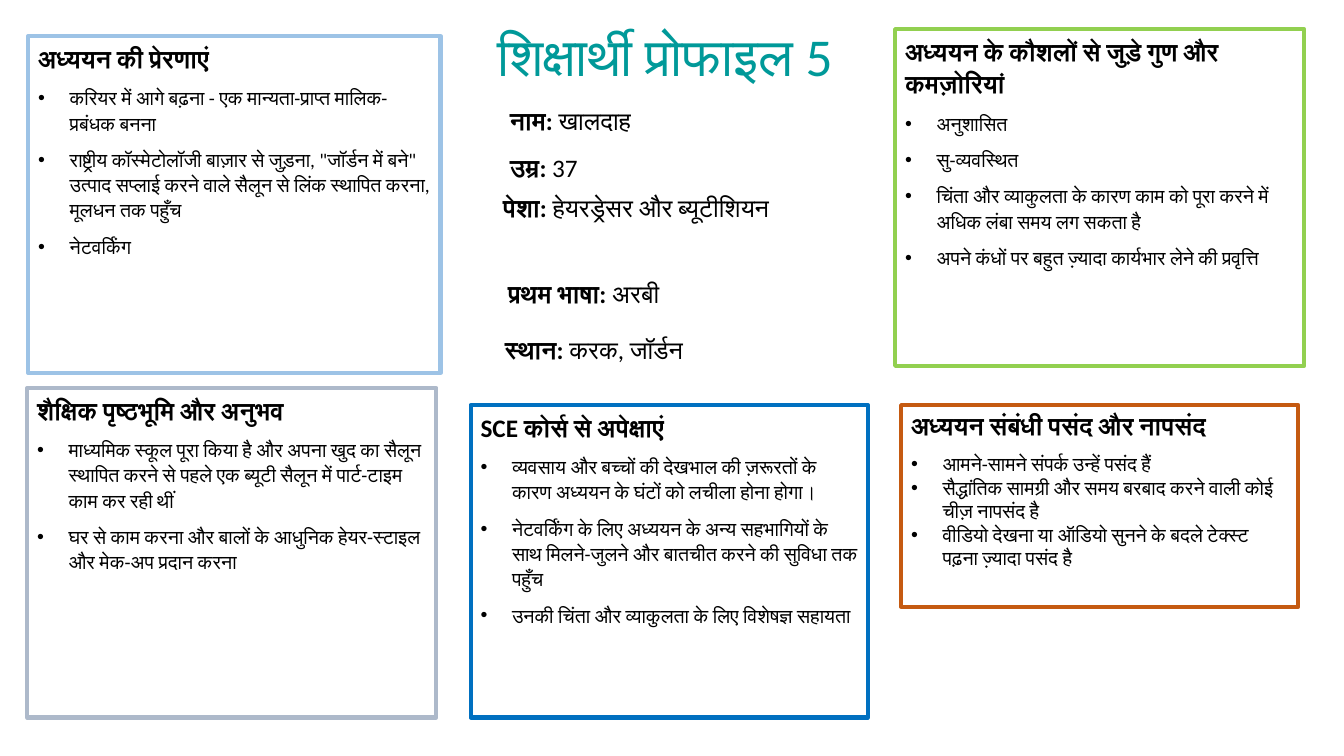
"""Builds a one-slide learner profile with outlined panels around a column of personal facts."""
from lxml.etree import SubElement
from pptx import Presentation
from pptx.dml.color import RGBColor
from pptx.enum.shapes import MSO_SHAPE as Preset
from pptx.enum.text import MSO_ANCHOR as Anchor, MSO_AUTO_SIZE as AutoSize, PP_ALIGN as Align
from pptx.oxml.ns import qn
from pptx.util import Pt

FONT = "Calibri"
INDENT = 22.5
SPACED = {"line": 1.07, "after": 8}
COMPACT = {"line": 1, "after": 0, "first_bullet_line": 1.5}

PANELS = [
    ((336.2, 289.4, 283.7, 223.2), "0070C0", SPACED, "SCE कोर्स से अपेक्षाएं", [
        "व्यवसाय और बच्चों की देखभाल की ज़रूरतों के कारण अध्ययन के घंटों को लचीला होना होगा।",
        "नेटवर्किंग के लिए अध्ययन के अन्य सहभागियों के साथ मिलने-जुलने और बातचीत करने की सुविधा तक पहुँच",
        "उनकी चिंता और व्याकुलता के लिए विशेषज्ञ सहायता"]),
    ((20.2, 25.9, 294.5, 240.5), "9DC3E6", SPACED, "अध्ययन की प्रेरणाएं", [
        "करियर में आगे बढ़ना - एक मान्यता-प्राप्त मालिक-प्रबंधक बनना",
        "राष्ट्रीय कॉस्मेटोलॉजी बाज़ार से जुड़ना, \"जॉर्डन में बने\" उत्पाद सप्लाई करने वाले सैलून से "
        "लिंक स्थापित करना, मूलधन तक पहुँच",
        "नेटवर्किंग"]),
    ((639.4, 20.9, 292.3, 240.5), "92D050", SPACED, "अध्ययन के कौशलों से जुड़े गुण और कमज़ोरियां", [
        "अनुशासित",
        "सु-व्यवस्थित",
        "चिंता और व्याकुलता के कारण काम को पूरा करने में अधिक लंबा समय लग सकता है",
        "अपने कंधों पर बहुत ज़्यादा कार्यभार लेने की प्रवृत्ति"]),
    ((19.4, 277.2, 292.3, 235.4), "ADB9CA", SPACED, "शैक्षिक पृष्ठभूमि और अनुभव", [
        "माध्यमिक स्कूल पूरा किया है और अपना खुद का सैलून स्थापित करने से पहले "
        "एक ब्यूटी सैलून में पार्ट-टाइम काम कर रही थीं",
        "घर से काम करना और बालों के आधुनिक हेयर-स्टाइल और मेक-अप प्रदान करना"]),
    ((643.7, 289.4, 283.7, 144), "C55A11", COMPACT, "अध्ययन संबंधी पसंद और नापसंद", [
        "आमने-सामने संपर्क उन्हें पसंद हैं",
        "सैद्धांतिक सामग्री और समय बरबाद करने वाली कोई चीज़ नापसंद है",
        "वीडियो देखना या ऑडियो सुनने के बदले टेक्स्ट पढ़ना ज़्यादा पसंद है"]),
]

FACTS = [
    ((357.1, 72, 270.7, 28.8), "नाम:", " खालदाह"),
    ((357.1, 105.1, 228.2, 28.8), "उम्र:", " 37"),
    ((352.1, 133.9, 248.4, 51.1), "पेशा:", " हेयरड्रेसर और ब्यूटीशियन"),
    ((355.7, 195.1, 248.4, 28.8), "प्रथम भाषा:", " अरबी"),
    ((353.5, 235.4, 248.4, 28.8), "स्थान:", " करक, जॉर्डन"),
]


def color(hex_code):
    """Turn a hex string into a colour."""
    return RGBColor.from_string(hex_code)


def in_points(box):
    """Convert left, top, width and height to lengths."""
    return [Pt(length) for length in box]


def style_run(run, size, bold=False, hex_code="000000"):
    """Format one run for Latin and Devanagari text."""
    run.font.name = FONT
    run.font.size = Pt(size)
    run.font.bold = bold
    run.font.color.rgb = color(hex_code)
    SubElement(run.font._element, qn("a:cs")).set("typeface", FONT)


def add_bullet(paragraph):
    """Give a paragraph a hanging round bullet."""
    properties = paragraph._p.get_or_add_pPr()
    properties.set("marL", str(Pt(INDENT)))
    properties.set("indent", str(Pt(-INDENT)))
    SubElement(properties, qn("a:buFont")).set("typeface", "Arial")
    SubElement(properties, qn("a:buChar")).set("char", "•")


def add_title(slide, box, wording):
    """Place the slide title in its placeholder."""
    title = slide.shapes.title
    title.left, title.top, title.width, title.height = in_points(box)
    frame = title.text_frame
    frame.text = wording
    frame.word_wrap = False
    frame.auto_size = AutoSize.SHAPE_TO_FIT_TEXT
    frame.vertical_anchor = Anchor.TOP
    heading = frame.paragraphs[0]
    heading.alignment = Align.LEFT
    heading.line_spacing = 0.9
    heading.space_before = Pt(10)
    style_run(heading.runs[0], 38, hex_code="009999")


def add_panel(slide, box, border, spacing, heading, points):
    """Draw an outlined panel with a bold heading and bullets."""
    panel = slide.shapes.add_shape(Preset.RECTANGLE, *in_points(box))
    panel.shadow.inherit = False
    panel.fill.solid()
    panel.fill.fore_color.rgb = color("FFFFFF")
    panel.line.color.rgb = color(border)
    panel.line.width = Pt(3)
    frame = panel.text_frame
    frame.word_wrap = True
    frame.vertical_anchor = Anchor.TOP
    frame.text = "\n".join([heading, *points])
    for position, paragraph in enumerate(frame.paragraphs):
        is_heading = position == 0
        paragraph.alignment = Align.LEFT
        paragraph.line_spacing = spacing["line"]
        if position == 1:
            paragraph.line_spacing = spacing.get("first_bullet_line", spacing["line"])
        paragraph.space_after = Pt(spacing["after"])
        if not is_heading:
            add_bullet(paragraph)
        style_run(paragraph.runs[0], 18 if is_heading else 14, bold=is_heading)


def add_fact(slide, box, label, answer):
    """Write a bold label followed by its answer."""
    frame = slide.shapes.add_textbox(*in_points(box)).text_frame
    frame.word_wrap = True
    fact = frame.paragraphs[0]
    for wording, bold in ((label, True), (answer, False)):
        run = fact.add_run()
        run.text = wording
        style_run(run, 18, bold)


def main():
    """Build and save the learner profile."""
    presentation = Presentation()
    presentation.slide_width, presentation.slide_height = Pt(960), Pt(540)
    slide = presentation.slides.add_slide(presentation.slide_layouts.get_by_name("Title Only"))
    add_title(slide, (347.8, 18, 272.9, 49), "शिक्षार्थी प्रोफाइल 5")
    for panel in PANELS:
        add_panel(slide, *panel)
    for fact in FACTS:
        add_fact(slide, *fact)
    presentation.save("out.pptx")


if __name__ == "__main__":
    main()
